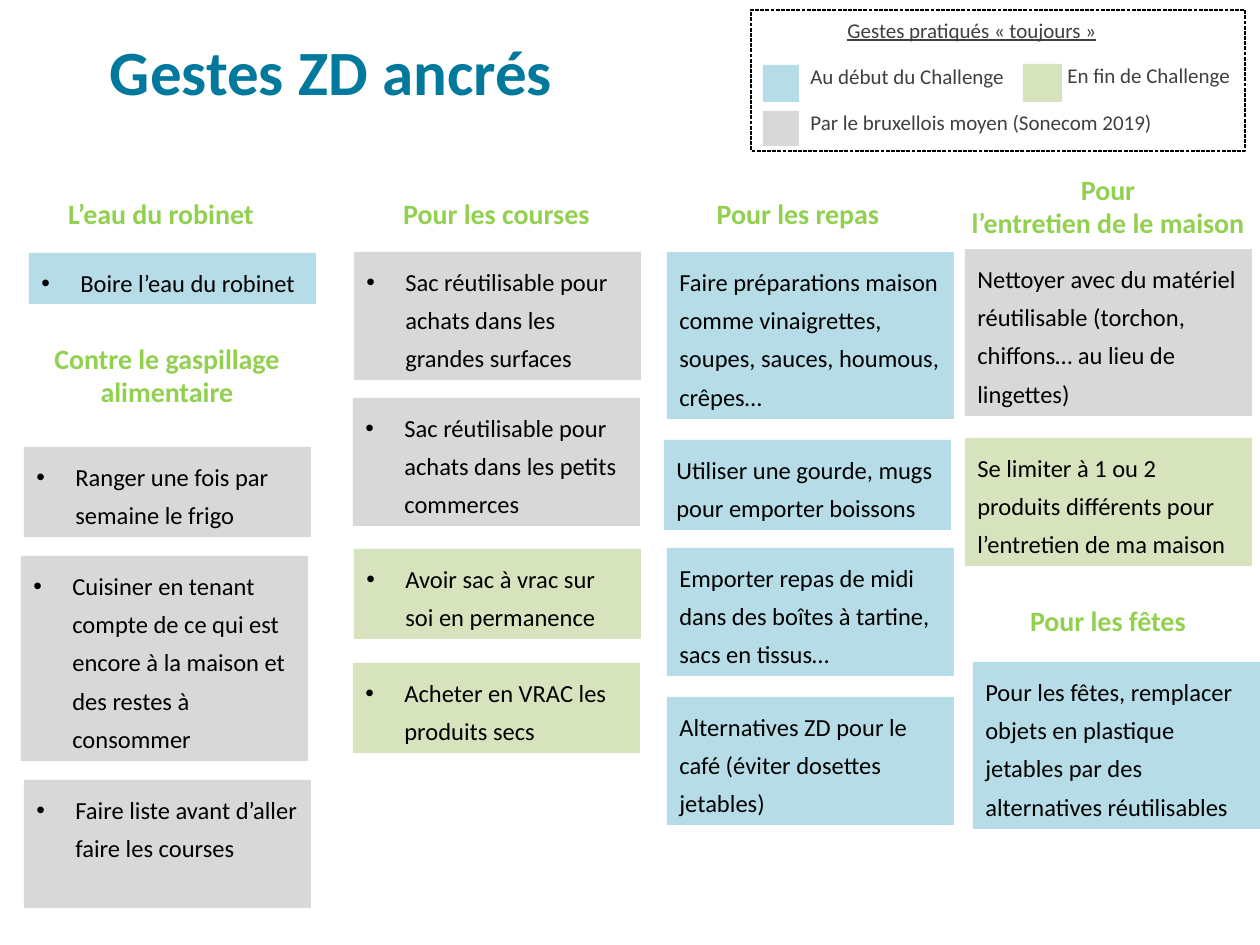
from lxml import etree
from pptx import Presentation
from pptx.dml.color import RGBColor
from pptx.enum.dml import MSO_LINE
from pptx.enum.shapes import MSO_SHAPE
from pptx.enum.text import MSO_ANCHOR, MSO_AUTO_SIZE, PP_ALIGN
from pptx.oxml.ns import qn
from pptx.util import Emu, Pt

RECTANGLE = MSO_SHAPE.RECTANGLE
DASH = MSO_LINE.SQUARE_DOT
TOP = MSO_ANCHOR.TOP
FIXED = MSO_AUTO_SIZE.NONE
LEFT, CENTER = PP_ALIGN.LEFT, PP_ALIGN.CENTER

EMU_PER_PX = 914400 / 126
FONT = "Calibri"
START, END, AVERAGE = "B6DDE7", "D6E3BC", "D8D8D8"
TITLE, HEADING, LEGEND, BLACK = "00799D", "92D050", "3F3F3F", "000000"
CARD_WIDTH, CARD_PADDING, CARD_LINE = 287, 13, 38.4
BULLET_INDENT = 39

# Heading box, heading, bulleted, cards as (left, top, lines high, colour, text);
# cards are placed from the heading's top-left corner
SECTIONS = [
    ((43, 190, 236, 47), "L’eau du robinet", True, [
        (-14, 63, 1, START, "Boire l’eau du robinet")]),
    ((24, 335, 286, 81), "Contre le gaspillage alimentaire", True, [
        (0, 112, 2, AVERAGE, "Ranger une fois par semaine le frigo"),
        (-3, 221, 5, AVERAGE, "Cuisiner en tenant compte de ce qui est encore "
                              "à la maison et des restes à consommer"),
        (0, 445, 3, AVERAGE, "Faire liste avant d’aller faire les courses")]),
    ((353, 190, 287, 47), "Pour les courses", True, [
        (1, 62, 3, AVERAGE, "Sac réutilisable pour achats dans les grandes surfaces"),
        (0, 208, 3, AVERAGE, "Sac réutilisable pour achats dans les petits commerces"),
        (1, 359, 2, END, "Avoir sac à vrac sur soi en permanence"),
        (0, 473, 2, END, "Acheter en VRAC les produits secs")]),
    ((680, 190, 236, 47), "Pour les repas", False, [
        (-13, 62, 4, START, "Faire préparations maison comme vinaigrettes, "
                            "soupes, sauces, houmous, crêpes…"),
        (-16, 250, 2, START, "Utiliser une gourde, mugs pour emporter boissons"),
        (-13, 358, 3, START, "Emporter repas de midi dans des boîtes à tartine, "
                             "sacs en tissus…"),
        (-13, 507, 3, START, "Alternatives ZD pour le café (éviter dosettes jetables)")]),
    ((911, 166, 394, 81), "Pour\nl’entretien de le maison", False, [
        (54, 83, 4, AVERAGE, "Nettoyer avec du matériel réutilisable (torchon, "
                             "chiffons… au lieu de lingettes)"),
        (54, 272, 3, END, "Se limiter à 1 ou 2 produits différents pour "
                          "l’entretien de ma maison")]),
    ((990, 597, 236, 47), "Pour les fêtes", False, [
        (-17, 65, 4, START, "Pour les fêtes, remplacer objets en plastique "
                            "jetables par des alternatives réutilisables")]),
]


def px(length):
    return Emu(round(length * EMU_PER_PX))


def colour(code):
    return RGBColor.from_string(code)


def add_bullet(para):
    properties = para._p.get_or_add_pPr()
    properties.set("marL", str(px(BULLET_INDENT)))
    properties.set("indent", str(-px(BULLET_INDENT)))
    etree.SubElement(properties, qn("a:buFont"), typeface="Arial")
    etree.SubElement(properties, qn("a:buChar"), char="•")


def write(shape, text, size, code, bold=False, underline=False, align=LEFT,
          spacing=None, bullet=False):
    frame = shape.text_frame
    frame.word_wrap = True
    frame.auto_size = FIXED
    frame.vertical_anchor = TOP
    for index, line in enumerate(text.split("\n")):
        para = frame.add_paragraph() if index else frame.paragraphs[0]
        if bullet:
            add_bullet(para)
        para.alignment = align
        if spacing:
            para.line_spacing = spacing
        span = para.add_run()
        span.text = line
        font = span.font
        font.name, font.size, font.bold = FONT, Pt(size), bold
        font.underline = underline
        font.color.rgb = colour(code)


def add_text(page, box, text, size, code, **style):
    shape = page.shapes.add_textbox(*map(px, box))
    write(shape, text, size, code, **style)


def add_box(page, box, fill=None):
    shape = page.shapes.add_shape(RECTANGLE, *map(px, box))
    shape.shadow.inherit = False
    shape.line.fill.background()
    if fill:
        shape.fill.solid()
        shape.fill.fore_color.rgb = colour(fill)
    else:
        shape.fill.background()
    return shape


def add_title(page, box, text):
    title = page.shapes.title
    title.left, title.top, title.width, title.height = map(px, box)
    write(title, text, 36, TITLE, bold=True)
    frame = title.text_frame
    frame.margin_left = frame.margin_right = px(9)
    frame.margin_top = frame.margin_bottom = px(9)


def add_legend(page, box):
    left, top, _, _ = box
    frame = add_box(page, box)
    frame.line.color.rgb = colour(BLACK)
    frame.line.width = Pt(0.75)
    frame.line.dash_style = DASH

    add_text(page, (left + 84, top + 1, 324, 38), "Gestes pratiqués « toujours »",
             12, LEGEND, underline=True)
    # Swatch box, label box, colour and label of each key
    keys = [
        ((12, 55, 36, 37), (47, 47, 226, 38), START, "Au début du Challenge"),
        ((272, 54, 39, 38), (304, 46, 190, 38), END, "En fin de Challenge"),
        ((12, 101, 36, 35), (47, 93, 398, 38), AVERAGE,
         "Par le bruxellois moyen (Sonecom 2019)"),
    ]
    for swatch, label, fill, text in keys:
        add_box(page, (left + swatch[0], top + swatch[1], *swatch[2:]), fill)
        add_text(page, (left + label[0], top + label[1], *label[2:]),
                 text, 12, LEGEND)


def add_section(page, box, heading, bulleted, cards):
    left, top, _, _ = box
    add_text(page, box, heading, 16, HEADING, bold=True, align=CENTER)
    for card_left, card_top, lines, fill, text in cards:
        height = round(CARD_PADDING + CARD_LINE * lines)
        card = add_box(page, (left + card_left, top + card_top, CARD_WIDTH, height), fill)
        write(card, text, 14, BLACK, spacing=1.3, bullet=bulleted)


def main():
    deck = Presentation()
    deck.slide_width, deck.slide_height = px(1260), px(945)
    page = deck.slides.add_slide(deck.slide_layouts[5])
    add_title(page, (101, 24, 503, 87), "Gestes ZD ancrés")
    add_legend(page, (751, 10, 494, 141))
    for section in SECTIONS:
        add_section(page, *section)
    deck.save("out.pptx")


if __name__ == "__main__":
    main()
